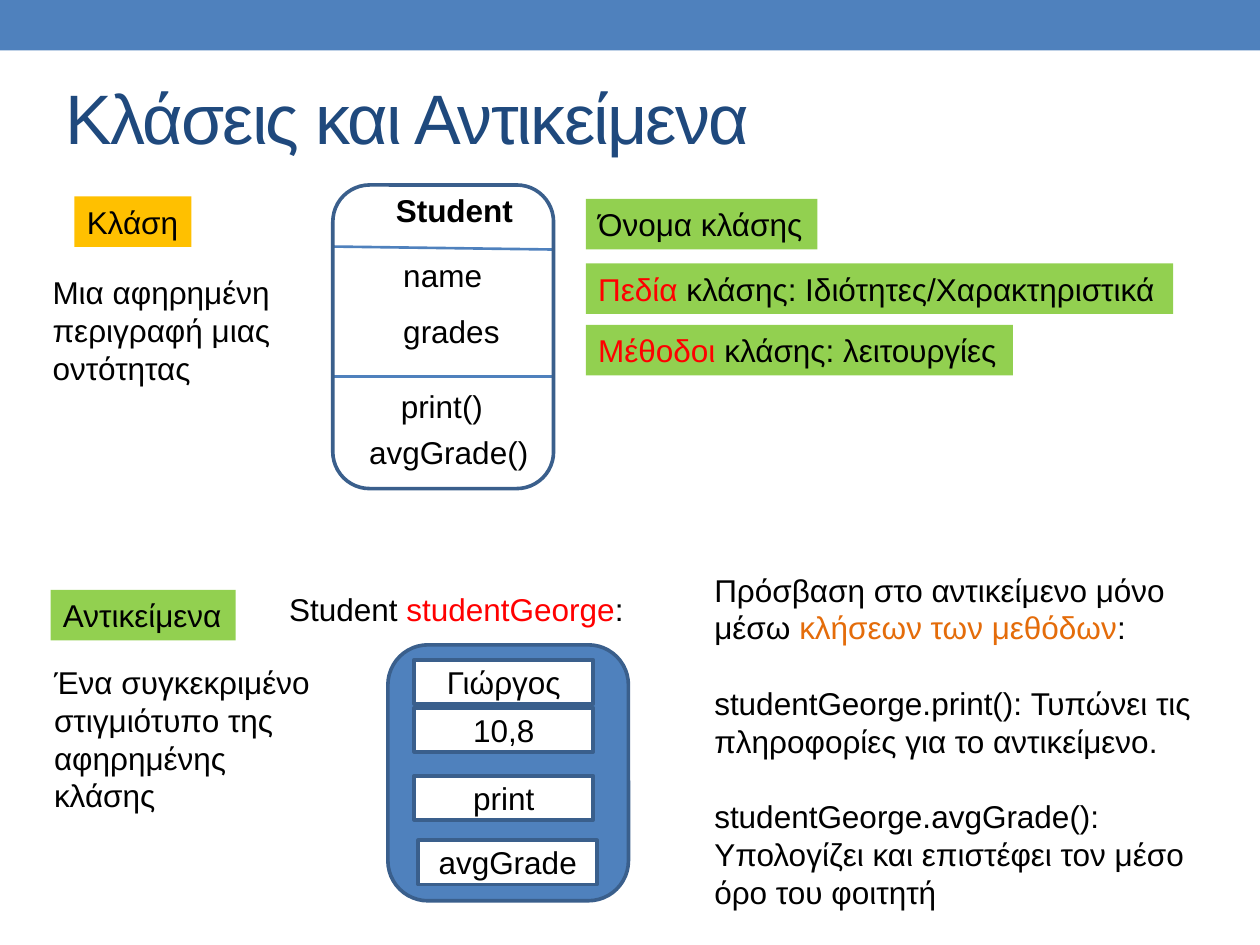
from pptx import Presentation
from pptx.dml.color import RGBColor
from pptx.enum.shapes import MSO_CONNECTOR, MSO_SHAPE
from pptx.enum.text import MSO_ANCHOR, MSO_AUTO_SIZE, PP_ALIGN
from pptx.oxml.ns import qn
from pptx.util import Cm, Pt
from lxml import etree

RECTANGLE, ROUNDED = MSO_SHAPE.RECTANGLE, MSO_SHAPE.ROUNDED_RECTANGLE
STRAIGHT = MSO_CONNECTOR.STRAIGHT
MIDDLE, CENTER = MSO_ANCHOR.MIDDLE, PP_ALIGN.CENTER
GROW = MSO_AUTO_SIZE.SHAPE_TO_FIT_TEXT

BLUE = RGBColor(0x4F, 0x81, 0xBD)
EDGE = RGBColor(0x3A, 0x5F, 0x8C)
NAVY = RGBColor(0x1F, 0x49, 0x7D)
AMBER = RGBColor(0xFF, 0xC0, 0x00)
GREEN = RGBColor(0x92, 0xD0, 0x50)
ORANGE = RGBColor(0xE4, 0x6C, 0x0A)
RED = RGBColor(0xFF, 0x00, 0x00)
BLACK = RGBColor(0x00, 0x00, 0x00)
WHITE = RGBColor(0xFF, 0xFF, 0xFF)

FONT = "Arial"
LABEL_HEIGHT = 1.02


def add_run(paragraph, text, color=BLACK, size=18, bold=None):
    run = paragraph.add_run()
    run.text = text
    run.font.name = FONT
    run.font.size = Pt(size)
    run.font.bold = bold
    run.font.color.rgb = color
    return run


def add_box(slide, kind, left, top, width, height, fill=None, line=None):
    shape = slide.shapes.add_shape(kind, Cm(left), Cm(top), Cm(width), Cm(height))
    shape.shadow.inherit = False
    if fill is None:
        shape.fill.background()
    else:
        shape.fill.solid()
        shape.fill.fore_color.rgb = fill
    if line is None:
        shape.line.fill.background()
    else:
        shape.line.color.rgb = line
        shape.line.width = Pt(2.08)
    return shape


def add_text(slide, left, top, width, height, *paragraphs, fill=None, wrap=False, gap=0):
    """Each paragraph is a list of (text, color, size, bold) runs, text alone sufficing."""
    box = slide.shapes.add_textbox(Cm(left), Cm(top), Cm(width), Cm(height))
    if fill is not None:
        box.fill.solid()
        box.fill.fore_color.rgb = fill
    frame = box.text_frame
    frame.word_wrap = wrap
    frame.auto_size = GROW
    for index, runs in enumerate(paragraphs):
        paragraph = frame.add_paragraph() if index else frame.paragraphs[0]
        if index:
            paragraph.space_before = Pt(gap)
        for run in runs:
            add_run(paragraph, *run)
    return box


def add_divider(slide, left, top, right, bottom):
    line = slide.shapes.add_connector(STRAIGHT, Cm(left), Cm(top), Cm(right), Cm(bottom))
    line.line.color.rgb = BLUE
    line.line.width = Pt(1.5)
    properties = line._element.spPr
    etree.SubElement(properties, qn("a:effectLst"))


def add_header(slide, width):
    add_box(slide, RECTANGLE, 0, 0, width, 1.02, BLUE)
    title = slide.shapes.add_textbox(Cm(1.07), Cm(0.97), Cm(22.86), Cm(2.74))
    title.text_frame.word_wrap = True
    title.text_frame.vertical_anchor = MIDDLE
    run = add_run(title.text_frame.paragraphs[0], "Κλάσεις και Αντικείμενα", NAVY, 40)
    run.font._element.set("spc", "-100")


def add_class_diagram(slide, left, top, width, height):
    add_divider(slide, left, top + 1.24, left + width, top + 1.3)
    add_divider(slide, left, top + 3.86, left + width, top + 3.86)
    add_box(slide, ROUNDED, left, top, width, height, line=EDGE)
    members = [
        ("Student", 1.02, 0, 2.9, True),
        ("name", 1.17, 1.3, 2.11, None),
        ("grades", 1.17, 2.44, 2.46, None),
        ("print()", 1.12, 3.94, 2.18, None),
        ("avgGrade()", 0.48, 4.88, 3.76, None),
    ]
    for text, x, y, label_width, bold in members:
        add_text(slide, left + x, top + y, label_width, LABEL_HEIGHT,
                 [(text, BLACK, 18, bold)])


def add_class_notes(slide, left, top):
    # Tag and definition on the left of the diagram
    add_text(slide, left + 0.69, top, 2.36, LABEL_HEIGHT, [("Κλάση",)], fill=AMBER)
    add_text(slide, left, top + 1.42, 5.49, 2.57,
             [("Μια αφηρημένη περιγραφή μιας οντότητας",)], wrap=True)


def add_legend(slide, left, top):
    entries = [
        (0, 4.67, [("Όνομα κλάσης",)]),
        (1.3, 11.84, [("Πεδία", RED), (" κλάσης: Ιδιότητες/Χαρακτηριστικά",)]),
        (2.54, 8.61, [("Μέθοδοι", RED), (" κλάσης: λειτουργίες",)]),
    ]
    for y, width, runs in entries:
        add_text(slide, left, top + y, width, LABEL_HEIGHT, runs, fill=GREEN)


def add_object_notes(slide, left, top):
    # Tag and definition on the left of the object
    add_text(slide, left + 0.18, top, 3.73, LABEL_HEIGHT, [("Αντικείμενα",)], fill=GREEN)
    add_text(slide, left, top + 1.35, 6.07, 3.33,
             [("Ένα συγκεκριμένο στιγμιότυπο της αφηρημένης κλάσης",)], wrap=True)


def add_object_diagram(slide, left, top, width, height):
    add_text(slide, left - 2.24, top - 1.24, 7.32, LABEL_HEIGHT,
             [("Student ",), ("studentGeorge", RED), (":",)])
    add_box(slide, ROUNDED, left, top, width, height, BLUE, EDGE)
    cells = [
        ("Γιώργος", 0.53, 0.3),
        ("10,8", 0.53, 1.27),
        ("print", 0.53, 2.64),
        ("avgGrade", 0.61, 3.94),
    ]
    for text, x, y in cells:
        cell = add_box(slide, RECTANGLE, left + x, top + y, 3.61, 0.89, WHITE, EDGE)
        cell.text_frame.vertical_anchor = MIDDLE
        paragraph = cell.text_frame.paragraphs[0]
        paragraph.alignment = CENTER
        add_run(paragraph, text)


def add_access_notes(slide, left, top, width, height):
    add_text(
        slide, left, top, width, height,
        [("Πρόσβαση στο αντικείμενο μόνο μέσω ",), ("κλήσεων των μεθόδων", ORANGE), (":",)],
        [("studentGeorge.print(): Τυπώνει τις πληροφορίες για το αντικείμενο.",)],
        [("studentGeorge.avgGrade(): Υπολογίζει και επιστέφει τον μέσο όρο του φοιτητή",)],
        wrap=True, gap=21.5)


def main():
    presentation = Presentation()
    presentation.slide_width, presentation.slide_height = Cm(25.4), Cm(19.05)
    slide = presentation.slides.add_slide(presentation.slide_layouts[6])

    add_header(slide, 25.4)
    # Upper half: the class
    add_class_notes(slide, 0.81, 3.96)
    add_class_diagram(slide, 6.71, 3.73, 4.45, 6.12)
    add_legend(slide, 11.81, 4.01)
    # Lower half: the object
    add_object_notes(slide, 0.84, 11.89)
    add_object_diagram(slide, 7.82, 13, 4.85, 5.16)
    add_access_notes(slide, 14.15, 11.38, 10.8, 7.19)

    presentation.save("out.pptx")


if __name__ == "__main__":
    main()
